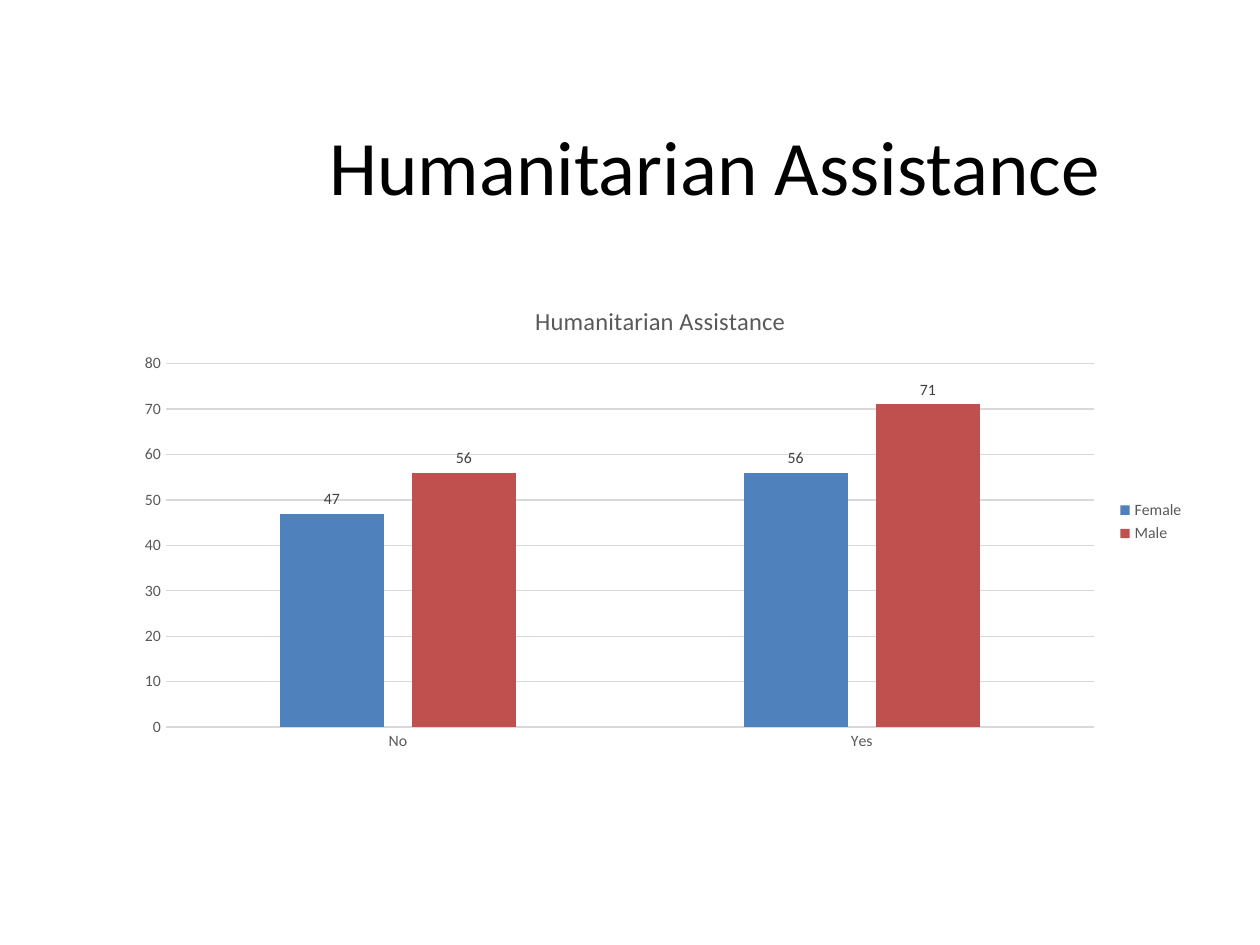
import pptx
import pptx.chart.data
import pptx.dml.color
import pptx.enum.chart
import pptx.enum.text
import pptx.util
from dataclasses import dataclass
from pptx.util import Cm


@dataclass(frozen=True)
class Theme:
    face: str = "Calibri"
    ink: str = "000000"
    grey: str = "595959"
    label: str = "404040"
    rule: str = "D9D9D9"
    bars: tuple = ("4F81BD", "C0504D")
    head: int = 44
    title: int = 14
    base: int = 10
    small: int = 9
    line: float = 0.75


theme = Theme()


def style(font, size, tint):
    font.name = theme.face
    font.size = pptx.util.Pt(size)
    font.bold = False
    font.color.rgb = pptx.dml.color.RGBColor.from_string(tint)


def draw(line):
    line.color.rgb = pptx.dml.color.RGBColor.from_string(theme.rule)
    line.width = pptx.util.Pt(theme.line)


deck = pptx.Presentation()
deck.slide_width, deck.slide_height = Cm(25.4), Cm(19.05)
slide = deck.slides.add_slide(deck.slide_layouts[5])

head = slide.shapes.title
head.left, head.top, head.width, head.height = Cm(4.7), Cm(1.73), Cm(19.43), Cm(3.18)
head.text_frame.vertical_anchor = pptx.enum.text.MSO_ANCHOR.MIDDLE
para = head.text_frame.paragraphs[0]
para.alignment = pptx.enum.text.PP_ALIGN.CENTER
run = para.add_run()
run.text = "Humanitarian Assistance"
style(run.font, theme.head, theme.ink)

data = pptx.chart.data.CategoryChartData()
data.categories = ["No", "Yes"]
data.add_series("Female", (47, 56))
data.add_series("Male", (56, 71))
chart = slide.shapes.add_chart(
    pptx.enum.chart.XL_CHART_TYPE.COLUMN_CLUSTERED,
    Cm(2.49), Cm(5.72), Cm(21.64), Cm(9.6), data,
).chart
style(chart.font, theme.base, theme.ink)

chart.has_title = True
run = chart.chart_title.text_frame.paragraphs[0].add_run()
run.text = "Humanitarian Assistance"
style(run.font, theme.title, theme.grey)
chart.chart_title.include_in_layout = False

chart.has_legend = True
chart.legend.position = pptx.enum.chart.XL_LEGEND_POSITION.RIGHT
chart.legend.include_in_layout = False
style(chart.legend.font, theme.small, theme.grey)

for axis in (chart.category_axis, chart.value_axis):
    axis.major_tick_mark = pptx.enum.chart.XL_TICK_MARK.NONE
    axis.minor_tick_mark = pptx.enum.chart.XL_TICK_MARK.NONE
    style(axis.tick_labels.font, theme.small, theme.grey)
draw(chart.category_axis.format.line)
axis = chart.value_axis
axis.minimum_scale, axis.maximum_scale, axis.major_unit = 0, 80, 10
axis.format.line.fill.background()
axis.has_major_gridlines = True
draw(axis.major_gridlines.format.line)

plot = chart.plots[0]
plot.vary_by_categories = False
plot.gap_width, plot.overlap = 219, -27
for bar, tint in zip(plot.series, theme.bars):
    bar.invert_if_negative = False
    bar.format.fill.solid()
    bar.format.fill.fore_color.rgb = pptx.dml.color.RGBColor.from_string(tint)
    labels = bar.data_labels
    labels.show_value = True
    labels.position = pptx.enum.chart.XL_LABEL_POSITION.OUTSIDE_END
    style(labels.font, theme.small, theme.label)

deck.save("out.pptx")
